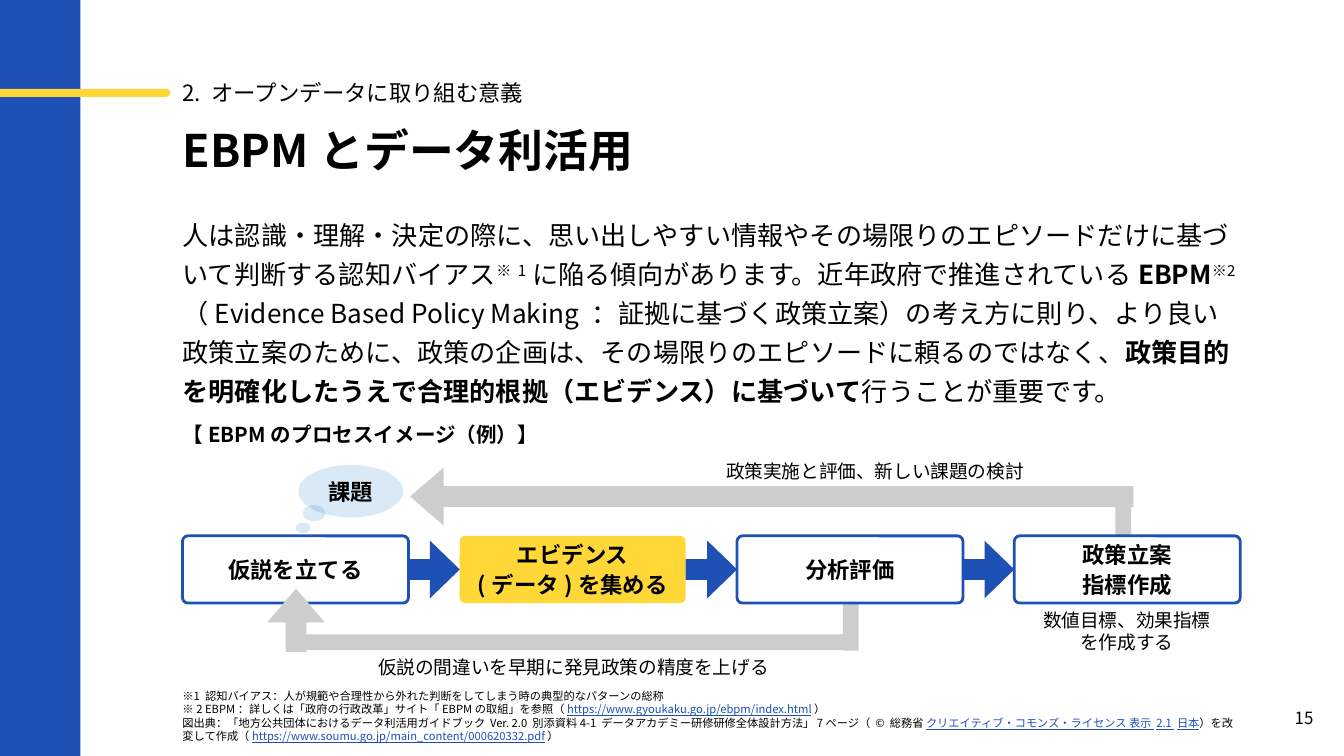
import pptx
import pptx.dml.color
import pptx.enum.shapes
import pptx.enum.text
import pptx.oxml
import pptx.oxml.ns
import pptx.util

Cm = pptx.util.Cm
Pt = pptx.util.Pt
RGBColor = pptx.dml.color.RGBColor
SHAPE = pptx.enum.shapes.MSO_SHAPE
ALIGN = pptx.enum.text.PP_ALIGN
ANCHOR = pptx.enum.text.MSO_ANCHOR
NO_FIT = pptx.enum.text.MSO_AUTO_SIZE.NONE
qn = pptx.oxml.ns.qn

BLUE = RGBColor(0x1E, 0x50, 0xB5)
YELLOW = RGBColor(0xFF, 0xD7, 0x37)
GRAY = RGBColor(0xCD, 0xCD, 0xCD)
SKY = RGBColor(0x00, 0x70, 0xC0)
WHITE = RGBColor(0xFF, 0xFF, 0xFF)
BLACK = RGBColor(0x00, 0x00, 0x00)

FONT = "Noto Sans CJK JP"
PLAIN = {}
BOLD = {"bold": True}
RAISED = {"baseline": "30000"}
LINK = {"underline": True, "color": BLUE}


def inside(box, left, top, width, height):
    return box[0] + left, box[1] + top, width, height


def place(item, box):
    item.left, item.top, item.width, item.height = map(Cm, box)


def format_span(span, size, style):
    values = {"name": FONT, "size": Pt(size), "bold": False} | style
    color = values.pop("color", BLACK)
    baseline = values.pop("baseline", None)
    for name, value in values.items():
        setattr(span.font, name, value)
    span.font.color.rgb = color
    properties = span._r.get_or_add_rPr()
    if baseline:
        properties.set("baseline", baseline)
    east_asian = pptx.oxml.parse_xml(
        '<a:ea xmlns:a="http://schemas.openxmlformats.org/drawingml/2006/main"/>')
    east_asian.set("typeface", FONT)
    properties.find(qn("a:latin")).addnext(east_asian)


def write(item, paragraphs, size, align=ALIGN.LEFT, anchor=ANCHOR.TOP, wrap=True,
          gap=0, spacing=1.0):
    frame = item.text_frame
    settings = {"word_wrap": wrap, "auto_size": NO_FIT, "vertical_anchor": anchor,
                "margin_left": 0, "margin_top": 0, "margin_right": 0, "margin_bottom": 0}
    for name, value in settings.items():
        setattr(frame, name, value)
    for index, spans in enumerate(paragraphs):
        para = frame.add_paragraph() if index else frame.paragraphs[0]
        layout = {"alignment": align, "line_spacing": spacing,
                  "space_before": Pt(gap if index else 0)}
        for name, value in layout.items():
            setattr(para, name, value)
        for text, style in spans:
            for number, line in enumerate(text.split("\n")):
                if number:
                    para.add_line_break()
                span = para.add_run()
                span.text = line
                format_span(span, size, style)


def add_text(page, box, paragraphs, size, **options):
    item = page.shapes.add_textbox(*map(Cm, box))
    write(item, paragraphs, size, **options)


def add_block(page, kind, box, fill, line=None, adjust=(), turn=0):
    block = page.shapes.add_shape(kind, *map(Cm, box))
    block.shadow.inherit = False
    block.fill.solid()
    block.fill.fore_color.rgb = fill
    if line is None:
        block.line.fill.background()
    else:
        block.line.color.rgb = line
        block.line.width = Pt(1.5)
    for index, value in enumerate(adjust):
        block.adjustments[index] = value
    block.rotation = turn
    return block


def add_arrow(page, box, fill, turn=0):
    add_block(page, SHAPE.RIGHT_ARROW, box, fill, adjust=(0.36, 0.58), turn=turn)


def draw_rail(page, box):
    add_block(page, SHAPE.RECTANGLE, box, BLUE)
    add_block(page, SHAPE.ROUNDED_RECTANGLE, inside(box, -0.28, 1.68, 3.5, 0.15),
              YELLOW, adjust=(0.5,))


def draw_heading(page, box):
    add_text(page, inside(box, 0, 0, box[2], 0.69),
             [[("2. オープンデータに取り組む意義", PLAIN)]], 12, anchor=ANCHOR.MIDDLE)
    title = page.shapes.title
    place(title, inside(box, 0, 0.91, box[2], 1.02))
    write(title, [[("EBPMとデータ利活用", BOLD)]], 24)


def draw_body(page, box):
    body = page.placeholders[1]
    place(body, box)
    properties = body.text_frame.paragraphs[0]._p.get_or_add_pPr()
    properties.set("marL", "0")
    properties.set("indent", "0")
    properties.append(pptx.oxml.parse_xml(
        '<a:buNone xmlns:a="http://schemas.openxmlformats.org/drawingml/2006/main"/>'))
    write(body, [[
        ("人は認識・理解・決定の際に、思い出しやすい情報やその場限りのエピソードだけに"
         "基づいて判断する認知バイアス", PLAIN),
        ("※1", RAISED),
        ("に陥る傾向があります。近年政府で推進されている", PLAIN),
        ("EBPM", BOLD),
        ("※2", RAISED),
        ("（Evidence Based Policy Making ：証拠に基づく政策立案）の考え方に則り、"
         "より良い政策立案のために、政策の企画は、その場限りのエピソードに頼るのではなく、", PLAIN),
        ("政策目的を明確化したうえで合理的根拠（エビデンス）に基づいて", BOLD),
        ("行うことが重要です。", PLAIN),
    ]], 14, spacing=1.25)


def draw_feedback(page, box):
    for bar in ((2.14, 3.3, 10.46, 0.3), (12.48, 2.16, 0.3, 1.45)):
        add_block(page, SHAPE.RECTANGLE, inside(box, *bar), GRAY)
    add_arrow(page, inside(box, 4.3, 0.15, 13.67, 1.09), GRAY, turn=180)
    add_block(page, SHAPE.RECTANGLE, inside(box, 17.63, 0.5, 0.3, 1.93), GRAY)


def draw_steps(page, box):
    steps = (["仮説を立てる"], ["エビデンス", "(データ)を集める"],
             ["分析評価"], ["政策立案", "指標作成"])
    width, gap = 4.27, 0.97
    for index, lines in enumerate(steps):
        left = index * (width + gap)
        highlighted = index == 1
        step = add_block(page, SHAPE.ROUNDED_RECTANGLE,
                         inside(box, left, 0, width, box[3]),
                         YELLOW if highlighted else WHITE,
                         None if highlighted else BLUE, (0.08,))
        write(step, [[(line, BOLD)] for line in lines], 12,
              align=ALIGN.CENTER, anchor=ANCHOR.MIDDLE, gap=2)
        if index:
            add_arrow(page, inside(box, left - gap, 0.09, gap, 1.09), BLUE)


def draw_thought(page, box):
    bubbles = ((0.05, 0, 1.98, 0.99), (0.13, 0.76, 0.43, 0.3), (0, 1.09, 0.28, 0.2))
    for index, bubble in enumerate(bubbles):
        item = add_block(page, SHAPE.OVAL, inside(box, *bubble), SKY)
        color = item.fill._xPr.find(qn("a:solidFill")).find(qn("a:srgbClr"))
        color.append(pptx.oxml.parse_xml(
            '<a:alpha xmlns:a="http://schemas.openxmlformats.org/drawingml/2006/main"'
            ' val="15000"/>'))
        if index == 0:
            write(item, [[("課題", BOLD)]], 12, align=ALIGN.CENTER,
                  anchor=ANCHOR.MIDDLE, wrap=False)


def draw_process(page, box):
    draw_feedback(page, box)
    draw_steps(page, inside(box, 0, 1.44, box[2], 1.27))
    captions = (
        ("政策実施と評価、新しい課題の検討", (9.91, 0, 6.35, 0.43)),
        ("仮説の間違いを早期に発見政策の精度を上げる", (2.14, 3.71, 10.49, 0.43)),
        ("数値目標、効果指標\nを作成する", (15.85, 2.82, 3.99, 0.86)),
    )
    for text, area in captions:
        add_text(page, inside(box, *area), [[(text, PLAIN)]], 10, align=ALIGN.CENTER)
    draw_thought(page, inside(box, 2.14, 0.1, 2.03, 1.29))
    add_arrow(page, inside(box, 1.55, 2.49, 1.19, 1.09), GRAY, turn=270)
    add_text(page, inside(box, 0, -0.71, 8.71, 0.48),
             [[("【EBPMのプロセスイメージ（例）】", BOLD)]], 11)


def draw_notes(page, box):
    add_text(page, box, [
        [("※1 認知バイアス：人が規範や合理性から外れた判断をしてしまう時の典型的なパターンの総称\n"
          "※2 EBPM：詳しくは「政府の行政改革」サイト「EBPMの取組」を参照（", PLAIN),
         ("https://www.gyoukaku.go.jp/ebpm/index.html", LINK),
         ("）", PLAIN)],
        [("図出典：「地方公共団体におけるデータ利活用ガイドブック Ver. 2.0 別添資料4-1 "
          "データアカデミー研修研修全体設計方法」7ページ（ © 総務省 ", PLAIN),
         ("クリエイティブ・コモンズ・ライセンス 表示 2.1 日本", LINK),
         ("）を改変して作成（", PLAIN),
         ("https://www.soumu.go.jp/main_content/000620332.pdf", LINK),
         ("）", PLAIN)],
    ], 6)


def main():
    deck = pptx.Presentation()
    deck.slide_width, deck.slide_height = Cm(25.4), Cm(14.29)
    page = deck.slides.add_slide(deck.slide_layouts[1])
    left, width = 3.45, 20
    draw_rail(page, (0, 0, 1.52, 14.29))
    draw_heading(page, (left, 1.4, width, 1.93))
    draw_body(page, (left, 3.99, width, 3.73))
    draw_process(page, (left, 8.69, width, 4.14))
    draw_notes(page, (left, 13.03, width, 1.02))
    add_text(page, (24.1, 13.03, 1.09, 1.09), [[("15", PLAIN)]], 9,
             align=ALIGN.CENTER, anchor=ANCHOR.MIDDLE)
    deck.save("out.pptx")


if __name__ == "__main__":
    main()
